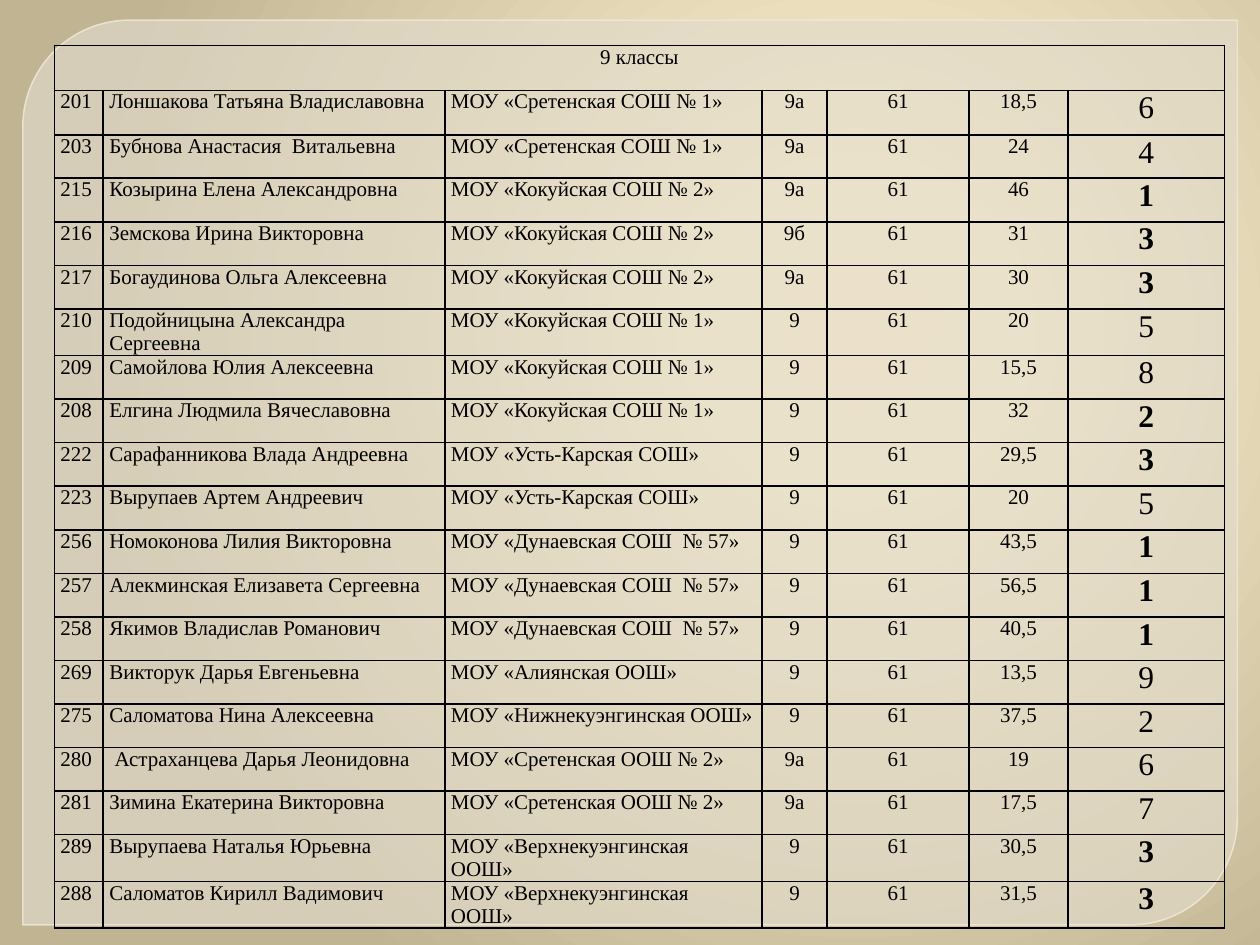
from lxml.etree import SubElement
from pptx import Presentation
from pptx.dml.color import RGBColor
from pptx.enum.shapes import MSO_SHAPE
from pptx.enum.text import PP_ALIGN
from pptx.oxml import parse_xml
from pptx.oxml.ns import nsdecls, qn
from pptx.util import Pt

COLUMN_WIDTHS = [28, 195.2, 181.2, 37.3, 81.2, 56.4, 89.6]
ROW_HEIGHTS = [25.6, 25.7, 24.6] + [24.9] * 17
MAX_SCORE = "61"
PRIZE_NUMBERS = {"215", "216", "217", "208", "222", "256", "257", "258", "289", "288"}

# number, pupil, school, class, score, place
RESULTS = [
    ("201", "Лоншакова Татьяна Владиславовна", "Сретенская СОШ № 1", "9а", "18,5", "6"),
    ("203", "Бубнова Анастасия  Витальевна", "Сретенская СОШ № 1", "9а", "24", "4"),
    ("215", "Козырина Елена Александровна", "Кокуйская СОШ № 2", "9а", "46", "1"),
    ("216", "Земскова Ирина Викторовна", "Кокуйская СОШ № 2", "9б", "31", "3"),
    ("217", "Богаудинова Ольга Алексеевна", "Кокуйская СОШ № 2", "9а", "30", "3"),
    ("210", "Подойницына Александра Сергеевна", "Кокуйская СОШ № 1", "9", "20", "5"),
    ("209", "Самойлова Юлия Алексеевна", "Кокуйская СОШ № 1", "9", "15,5", "8"),
    ("208", "Елгина Людмила Вячеславовна", "Кокуйская СОШ № 1", "9", "32", "2"),
    ("222", "Сарафанникова Влада Андреевна", "Усть-Карская СОШ", "9", "29,5", "3"),
    ("223", "Вырупаев Артем Андреевич", "Усть-Карская СОШ", "9", "20", "5"),
    ("256", "Номоконова Лилия Викторовна", "Дунаевская СОШ  № 57", "9", "43,5", "1"),
    ("257", "Алекминская Елизавета Сергеевна", "Дунаевская СОШ  № 57", "9", "56,5", "1"),
    ("258", "Якимов Владислав Романович", "Дунаевская СОШ  № 57", "9", "40,5", "1"),
    ("269", "Викторук Дарья Евгеньевна", "Алиянская ООШ", "9", "13,5", "9"),
    ("275", "Саломатова Нина Алексеевна", "Нижнекуэнгинская ООШ", "9", "37,5", "2"),
    ("280", " Астраханцева Дарья Леонидовна", "Сретенская ООШ № 2", "9а", "19", "6"),
    ("281", "Зимина Екатерина Викторовна", "Сретенская ООШ № 2", "9а", "17,5", "7"),
    ("289", "Вырупаева Наталья Юрьевна", "Верхнекуэнгинская ООШ", "9", "30,5", "3"),
    ("288", "Саломатов Кирилл Вадимович", "Верхнекуэнгинская ООШ", "9", "31,5", "3"),
]


def rgb(value):
    return RGBColor.from_string(value)


def set_alpha(fill, percent):
    """Make a solid fill partly transparent."""
    color = fill._xPr.find(qn("a:solidFill"))[0]
    SubElement(color, qn("a:alpha"), val=str(percent * 1000))


class SlideBuilder:
    font = "Times New Roman"
    ink = "000000"
    margins = {"margin_left": Pt(3.5), "margin_right": Pt(3.5),
               "margin_top": 0, "margin_bottom": 0}

    def __init__(self, s):
        self.s = s

    def background(self, stops, center):
        """Fill the slide with a circular gradient around center (x, y in percent)."""
        x, y = center
        gs = "".join(f'<a:gs pos="{pos * 1000}"><a:srgbClr val="{color}"/></a:gs>'
                     for pos, color in stops)
        bg = parse_xml(
            f'<p:bg {nsdecls("p", "a")}><p:bgPr><a:gradFill rotWithShape="1">'
            f'<a:gsLst>{gs}</a:gsLst><a:path path="circle"><a:fillToRect '
            f'l="{x * 1000}" t="{y * 1000}" r="{(100 - x) * 1000}" b="{(100 - y) * 1000}"/>'
            f'</a:path></a:gradFill><a:effectLst/></p:bgPr></p:bg>')
        self.s.element.cSld.insert(0, bg)

    def panel(self, left, top, width, height):
        sp = self.s.shapes.add_shape(MSO_SHAPE.ROUND_2_DIAG_RECTANGLE,
                                     Pt(left), Pt(top), Pt(width), Pt(height))
        sp.adjustments[0], sp.adjustments[1] = 0.118, 0
        sp.shadow.inherit = False
        sp.line.width = Pt(0.87)
        for fill, color, alpha in ((sp.fill, "E1DBCB", 65), (sp.line.fill, "EFE8D7", 88)):
            fill.solid()
            fill.fore_color.rgb = rgb(color)
            set_alpha(fill, alpha)

    def table(self, left, top, widths, heights):
        tbl = self.s.shapes.add_table(len(heights), len(widths), Pt(left), Pt(top),
                                      Pt(sum(widths)), Pt(sum(heights))).table
        tbl.first_row = tbl.horz_banding = False
        for column, width in zip(tbl.columns, widths):
            column.width = Pt(width)
        for row, height in zip(tbl.rows, heights):
            row.height = Pt(height)
        for cell in tbl.iter_cells():
            self.cell_frame(cell)
        return tbl

    def cell_frame(self, cell):
        """Set margins and a thin border, with no fill."""
        for name, value in self.margins.items():
            setattr(cell, name, value)
        cell.fill.background()
        tcPr = cell._tc.get_or_add_tcPr()
        for i, side in enumerate(("lnL", "lnR", "lnT", "lnB")):
            tcPr.insert(i, parse_xml(
                f'<a:{side} {nsdecls("a")} w="{Pt(1)}"><a:solidFill>'
                f'<a:srgbClr val="{self.ink}"/></a:solidFill></a:{side}>'))

    def cell_text(self, cell, text, align=PP_ALIGN.LEFT, size=12, bold=False):
        p = cell.text_frame.paragraphs[0]
        p.alignment = align
        r = p.add_run()
        r.text = text
        for name, value in {"name": self.font, "size": Pt(size), "bold": bold}.items():
            setattr(r.font, name, value)
        r.font.color.rgb = rgb(self.ink)


def main():
    prs = Presentation()
    prs.slide_width, prs.slide_height = Pt(720), Pt(540)
    b = SlideBuilder(prs.slides.add_slide(prs.slide_layouts[6]))
    b.background([(0, "FEEFCB"), (20, "FAEDCA"), (100, "C1B493")], (68, 35))
    b.panel(13, 11.5, 694, 517)

    tbl = b.table(31, 26, COLUMN_WIDTHS, ROW_HEIGHTS)
    tbl.cell(0, 0).merge(tbl.cell(0, len(COLUMN_WIDTHS) - 1))
    b.cell_text(tbl.cell(0, 0), "9 классы", PP_ALIGN.CENTER)
    for i, (number, pupil, school, grade, score, place) in enumerate(RESULTS, 1):
        for j, text in enumerate((number, pupil, f"МОУ «{school}»")):
            b.cell_text(tbl.cell(i, j), text)
        for j, text in enumerate((grade, MAX_SCORE, score), 3):
            b.cell_text(tbl.cell(i, j), text, PP_ALIGN.CENTER)
        b.cell_text(tbl.cell(i, 6), place, PP_ALIGN.CENTER, 18, number in PRIZE_NUMBERS)
    prs.save("out.pptx")


if __name__ == "__main__":
    main()
